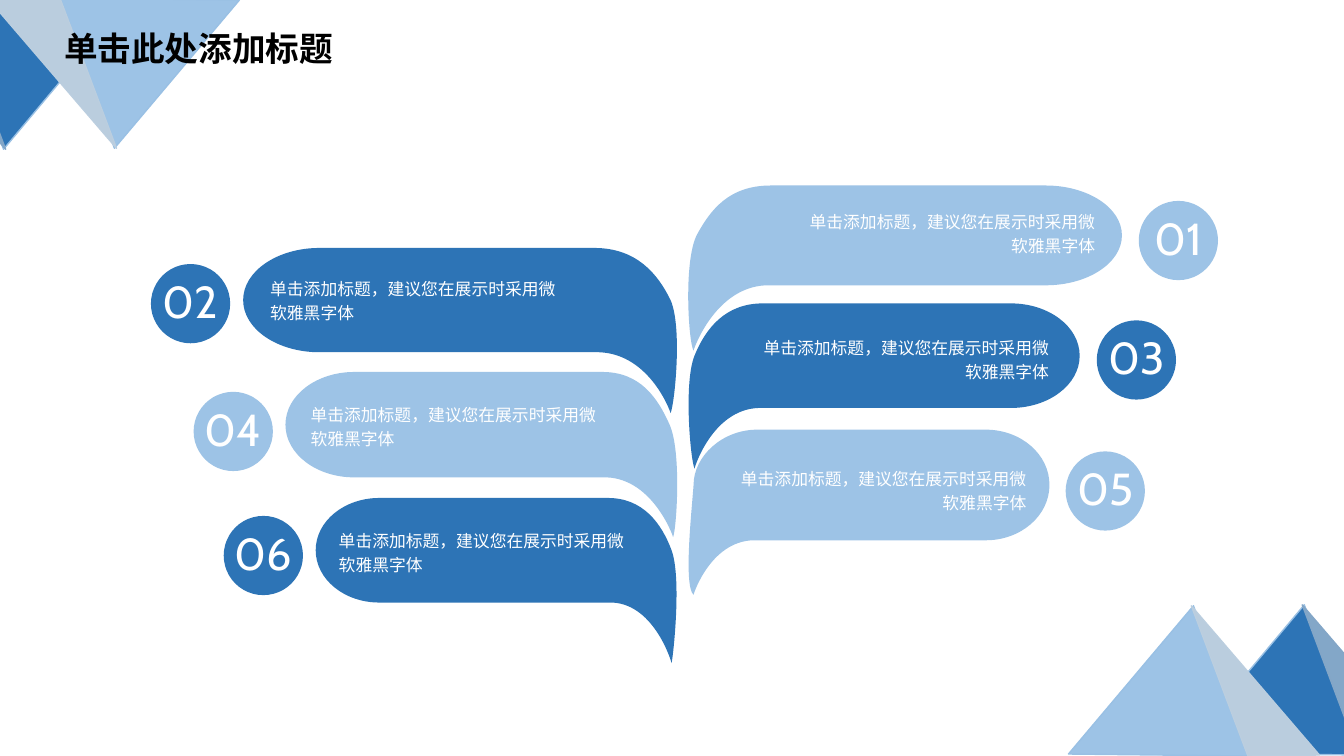
from dataclasses import dataclass

import pptx
import pptx.dml.color
import pptx.enum.shapes
import pptx.enum.text
import pptx.oxml
import pptx.oxml.ns
import pptx.util

Pt = pptx.util.Pt
Align = pptx.enum.text.PP_ALIGN
Anchor = pptx.enum.text.MSO_ANCHOR
Point = tuple[float, float]

DARK, LIGHT, WHITE = "2D74B6", "9DC3E6", "FFFFFF"
CHINESE_FONT, NUMBER_FONT = "Noto Sans CJK SC", "Cabin"
CAPTION = "单击添加标题，建议您在展示时采用微软雅黑字体"
LEFT_EDGE, RIGHT_EDGE = 483.3, 491.8
TAIL_DEPTH = 118
CIRCLE_SIZE = 56.6
CAPTION_SIZE = (205, 53.3)
NAMESPACE = pptx.oxml.ns.nsdecls("a")


@dataclass(frozen=True)
class Facet:
    points: tuple[Point, Point, Point]
    fill: str
    line: str


@dataclass(frozen=True)
class Bubble:
    """Curve fields are distances from the inner edge towards the outer end."""
    number: str
    color: str
    top: float
    width: float
    body: float
    neck: float
    shoulder: float
    tip: float
    tail_low: float
    tail_high: float
    caption: Point
    circle: Point

    @property
    def on_left(self) -> bool:
        return int(self.number) % 2 == 0


FACETS = (
    Facet(((843.1, 537.8), (931.7, 432), (970.6, 539.3)), DARK, "99C0E4"),
    Facet(((970.6, 539.3), (930.2, 432), (1021.7, 538.6)), "83A7C8", "83A6C7"),
    Facet(((763.2, 538.6), (852.5, 432.7), (891.4, 540)), LIGHT, "99C0E4"),
    Facet(((891.4, 540), (851, 432.7), (942.5, 539.3)), "BACDDE", "BBCEDF"),
)
TURN_SUM = (934.2, 538.6)

BUBBLES = (
    Bubble("01", LIGHT, 132.5, 309.6, 71.3, 5.8, 15.8, 3.6, 0, -3.6, (577.3, 139), (813.4, 143.5)),
    Bubble("02", DARK, 177.1, 309.6, 74.5, 4.3, 13.7, 4.3, 1.4, -4.3, (193, 186.9), (107.8, 188.6)),
    Bubble("03", DARK, 216.7, 279.4, 74.7, 4.3, 12.2, 4.3, 1.4, -3.6, (544.4, 229), (783.4, 228.8)),
    Bubble("04", LIGHT, 265.7, 279.4, 75.3, 5, 13.7, 2.5, 0, -3.6, (221.9, 276.9), (138.3, 279.9)),
    Bubble("05", LIGHT, 306.9, 257.8, 79, 3.6, 3.6, 3.6, -3.6, 2.2, (528.2, 322.6), (761.2, 322.4)),
    Bubble("06", DARK, 355.7, 257.8, 74.7, 3.6, 10.8, 3.6, 2.2, -3.6, (242, 366.9), (159.8, 368.5)),
)


def rgb(color: str) -> pptx.dml.color.RGBColor:
    return pptx.dml.color.RGBColor.from_string(color)


def paint(shape, fill: str, line: str | None = None) -> None:
    shape.shadow.inherit = False
    shape.fill.solid()
    shape.fill.fore_color.rgb = rgb(fill)
    if line is None:
        shape.line.fill.background()
    else:
        shape.line.color.rgb = rgb(line)
        shape.line.width = Pt(1)


def add_run(paragraph, text: str, font: str, size: float, color: str, bold: bool = False) -> None:
    run = paragraph.add_run()
    run.text = text
    run.font.name = font
    run.font.size = Pt(size)
    run.font.bold = bold
    run.font.color.rgb = rgb(color)
    east_asian = pptx.oxml.parse_xml(f'<a:ea {NAMESPACE} typeface="{font}"/>')
    run._r.get_or_add_rPr().append(east_asian)


def add_polygon(shapes, points: list[Point]):
    corners = [(Pt(x), Pt(y)) for x, y in points]
    builder = shapes.build_freeform(*corners[0], scale=1.0)
    builder.add_line_segments(corners[1:], close=True)
    return builder.convert_to_shape()


def add_pyramids(slide, turned: bool) -> None:
    group = slide.shapes.add_group_shape()
    for facet in FACETS:
        shift_x, shift_y = 0, 0
        if turned:
            shift_x, shift_y = (total - min(values) - max(values)
                                for total, values in zip(TURN_SUM, zip(*facet.points)))
        shape = add_polygon(group.shapes, [(x + shift_x, y + shift_y) for x, y in facet.points])
        shape.rotation = 180 if turned else 0
        paint(shape, facet.fill, facet.line)


def bubble_segments(bubble: Bubble) -> list[tuple[str, list[Point]]]:
    """Return path commands, measured from the inner edge and the top."""
    width, body, middle = bubble.width, bubble.body, bubble.body / 2
    bend, cap, cap_control = 0.19 * width, 0.824 * width, 0.92 * width
    neck, tip = (bubble.neck, middle), (bubble.tip, TAIL_DEPTH)
    return [
        ("moveTo", [neck]),
        ("cubicBezTo", [(bubble.shoulder, 0.24 * body), (0.094 * width, 0), (bend, 0)]),
        ("lnTo", [(cap, 0)]),
        ("cubicBezTo", [(cap_control, 0), (width, 0.22 * body), (width, middle)]),
        ("cubicBezTo", [(width, 0.78 * body), (cap_control, body), (cap, body)]),
        ("lnTo", [(bend, body)]),
        ("cubicBezTo", [(0.065 * width, body - 1.4), (bubble.tip, TAIL_DEPTH - 1), tip]),
        ("cubicBezTo", [(bubble.tail_low, TAIL_DEPTH - 6.5),
                        (bubble.tail_high, middle + 19.5), neck]),
        ("close", []),
    ]


def add_speech_shape(slide, bubble: Bubble) -> None:
    width, top, bottom = bubble.width, bubble.top, bubble.top + TAIL_DEPTH
    left = LEFT_EDGE - width if bubble.on_left else RIGHT_EDGE
    right = left + width
    shape = add_polygon(slide.shapes, [(left, top), (right, top), (right, bottom), (left, bottom)])
    outline = shape.element.find(".//" + pptx.oxml.ns.qn("a:path"))
    for command in list(outline):
        outline.remove(command)
    for name, points in bubble_segments(bubble):
        nodes = "".join(
            f'<a:pt x="{Pt(width - x if bubble.on_left else x)}" y="{Pt(y)}"/>' for x, y in points)
        outline.append(pptx.oxml.parse_xml(f"<a:{name} {NAMESPACE}>{nodes}</a:{name}>"))
    paint(shape, bubble.color)


def add_text(slide, position: Point, size: Point, text: str, font: str, points: float,
             alignment, spacing) -> None:
    box = slide.shapes.add_textbox(*map(Pt, position), *map(Pt, size))
    frame = box.text_frame
    frame.word_wrap = True
    frame.vertical_anchor = Anchor.MIDDLE
    frame.margin_left = frame.margin_right = frame.margin_top = frame.margin_bottom = 0
    paragraph = frame.paragraphs[0]
    paragraph.alignment = alignment
    paragraph.line_spacing = spacing
    paragraph.space_before = Pt(10)
    add_run(paragraph, text, font, points, WHITE)


def add_bubble(slide, bubble: Bubble) -> None:
    add_speech_shape(slide, bubble)
    left, top = bubble.circle
    circle = slide.shapes.add_shape(pptx.enum.shapes.MSO_SHAPE.OVAL, Pt(left), Pt(top),
                                    Pt(CIRCLE_SIZE), Pt(CIRCLE_SIZE))
    paint(circle, bubble.color)
    add_text(slide, (left + 4.2, top + 17.2), (48.2, 22.3), bubble.number, NUMBER_FONT, 32,
             Align.CENTER, 0.9)
    add_text(slide, bubble.caption, CAPTION_SIZE, CAPTION, CHINESE_FONT, 12,
             Align.LEFT if bubble.on_left else Align.RIGHT, Pt(17))


def place_title(slide) -> None:
    title = slide.shapes.title
    title.left, title.top, title.width, title.height = Pt(37.7), Pt(16.6), Pt(208.1), Pt(36)
    title.element.getparent().append(title.element)
    frame = title.text_frame
    frame.word_wrap = False
    frame.auto_size = pptx.enum.text.MSO_AUTO_SIZE.SHAPE_TO_FIT_TEXT
    frame.vertical_anchor = Anchor.TOP
    paragraph = frame.paragraphs[0]
    paragraph.alignment = Align.CENTER
    add_run(paragraph, "单击此处添加标题", CHINESE_FONT, 24, "000000", bold=True)


def main() -> None:
    presentation = pptx.Presentation()
    presentation.slide_width, presentation.slide_height = Pt(960), Pt(540)
    slide = presentation.slides.add_slide(presentation.slide_layouts[5])
    for turned in (False, True):
        add_pyramids(slide, turned)
    place_title(slide)
    for bubble in BUBBLES:
        add_bubble(slide, bubble)
    presentation.save("out.pptx")


if __name__ == "__main__":
    main()
